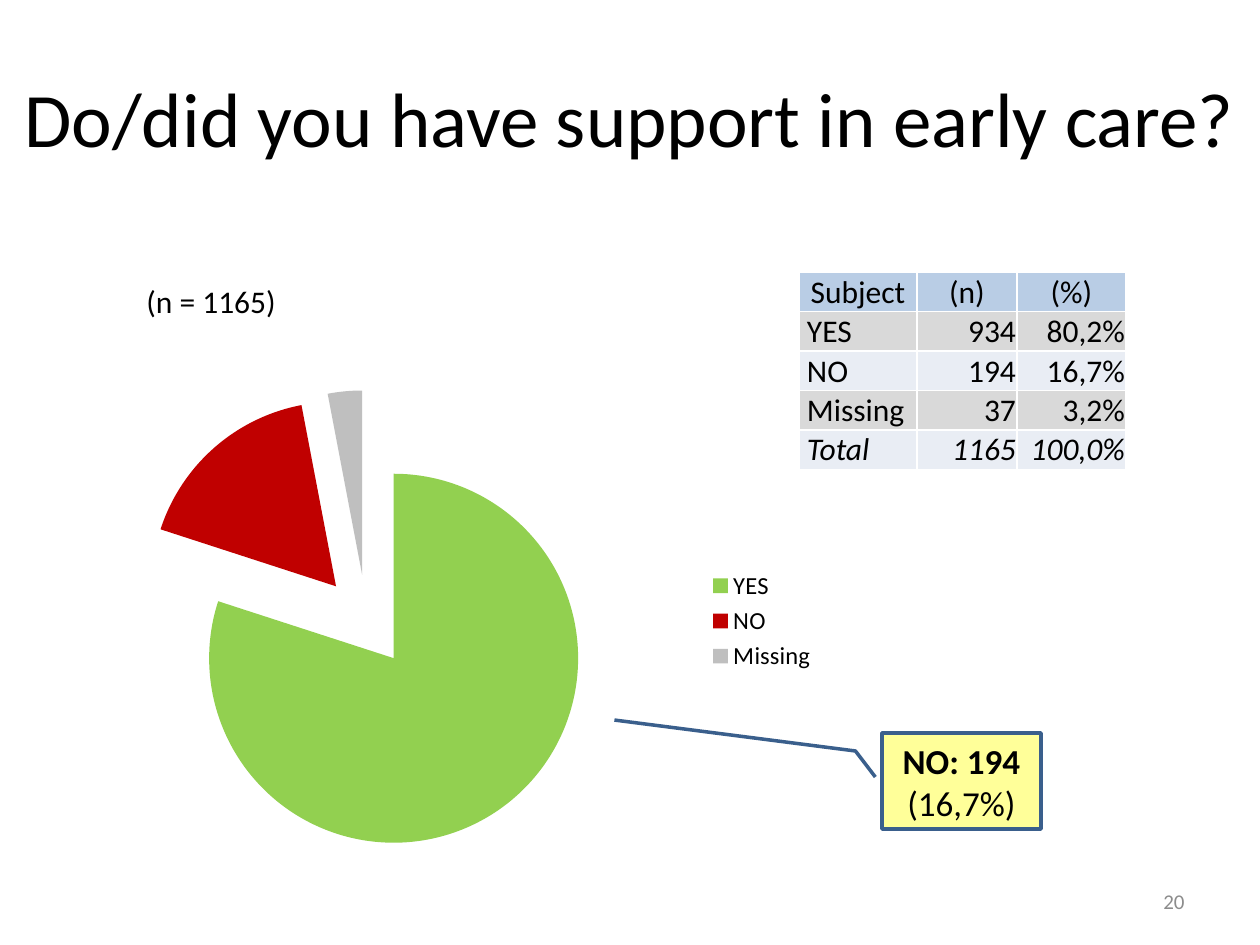
"""Build the slide on support in early care: pie chart, table and callout."""
from typing import NamedTuple

from lxml import etree
from pptx import Presentation
from pptx.chart.data import CategoryChartData
from pptx.dml.color import RGBColor
from pptx.enum.chart import XL_CHART_TYPE, XL_LEGEND_POSITION
from pptx.enum.shapes import MSO_SHAPE
from pptx.enum.text import MSO_ANCHOR, PP_ALIGN
from pptx.oxml.ns import qn
from pptx.util import Emu, Pt

PIE = XL_CHART_TYPE.PIE
LEGEND_RIGHT = XL_LEGEND_POSITION.RIGHT
CALLOUT = MSO_SHAPE.LINE_CALLOUT_2
MIDDLE, BOTTOM = MSO_ANCHOR.MIDDLE, MSO_ANCHOR.BOTTOM
LEFT, CENTER, RIGHT = PP_ALIGN.LEFT, PP_ALIGN.CENTER, PP_ALIGN.RIGHT

FONT = "Calibri"
EMU_PER_PX = 914400 / 126
BLACK = RGBColor(0x00, 0x00, 0x00)
GREEN = RGBColor(0x92, 0xD0, 0x50)
RED = RGBColor(0xC0, 0x00, 0x00)
SILVER = RGBColor(0xBF, 0xBF, 0xBF)
HEADER_BLUE = RGBColor(0xB9, 0xCD, 0xE5)
BAND_GREY = RGBColor(0xD9, 0xD9, 0xD9)
BAND_BLUE = RGBColor(0xE9, 0xED, 0xF4)
NOTE_YELLOW = RGBColor(0xFF, 0xFF, 0x99)
NOTE_BORDER = RGBColor(0x3A, 0x5F, 0x8C)
NUMBER_GREY = RGBColor(0x8C, 0x8C, 0x8C)

COLUMN_WIDTHS = (118, 100, 109)
ROW_HEIGHT = 39
EXPLOSION = 25
CALLOUT_POINTS = (0.459, -0.042, 0.188, -0.167, -0.135, -1.683)


class Box(NamedTuple):
    """Position and size in px."""
    left: int
    top: int
    width: int
    height: int


class Answer(NamedTuple):
    """One answer with its table texts, pie share and slice colour."""
    subject: str
    count: str
    percent: str
    share: int
    color: RGBColor


ANSWERS = (
    Answer("YES", "934", "80,2%", 80, GREEN),
    Answer("NO", "194", "16,7%", 17, RED),
    Answer("Missing", "37", "3,2%", 3, SILVER),
)
HEADER = ("Subject", "(n)", "(%)")
TOTAL = ("Total", "1165", "100,0%")


def px(length: int) -> Emu:
    """Convert px to EMU."""
    return Emu(round(length * EMU_PER_PX))


def place(box: Box) -> tuple[Emu, ...]:
    """Convert a box to EMU lengths."""
    return tuple(px(length) for length in box)


def add_run(paragraph, text: str, size: int, color: RGBColor = BLACK,
            bold: bool = False, italic: bool = False) -> None:
    """Append a formatted run to a paragraph."""
    run = paragraph.add_run()
    run.text = text
    font = run.font
    font.name, font.size, font.bold, font.italic = FONT, Pt(size), bold, italic
    font.color.rgb = color


def add_title(slide, box: Box, text: str) -> None:
    """Fill and move the title placeholder."""
    title = slide.shapes.title
    title.left, title.top, title.width, title.height = place(box)
    title.text_frame.vertical_anchor = MIDDLE
    paragraph = title.text_frame.paragraphs[0]
    paragraph.alignment = CENTER
    add_run(paragraph, text, 44)


def add_label(slide, box: Box, text: str, size: int, color: RGBColor,
              align: PP_ALIGN, wrap: bool) -> None:
    """Add a single-line text box."""
    frame = slide.shapes.add_textbox(*place(box)).text_frame
    frame.word_wrap = wrap
    frame.vertical_anchor = MIDDLE
    frame.paragraphs[0].alignment = align
    add_run(frame.paragraphs[0], text, size, color)


def add_answer_table(slide, left: int, top: int) -> None:
    """Add the table of counts and percentages."""
    rows = [HEADER, *(answer[:3] for answer in ANSWERS), TOTAL]
    box = Box(left, top, sum(COLUMN_WIDTHS), ROW_HEIGHT * len(rows))
    table = slide.shapes.add_table(len(rows), len(HEADER), *place(box)).table
    for column, width in zip(table.columns, COLUMN_WIDTHS):
        column.width = px(width)
    for row_index, texts in enumerate(rows):
        is_header = row_index == 0
        band = BAND_GREY if row_index % 2 else BAND_BLUE
        for column_index, text in enumerate(texts):
            is_subject = column_index == 0 and not is_header
            cell = table.cell(row_index, column_index)
            cell.fill.solid()
            cell.fill.fore_color.rgb = HEADER_BLUE if is_header else band
            cell.vertical_anchor = BOTTOM
            cell.margin_left = px(8 if is_subject else 1)
            cell.margin_right = cell.margin_top = px(1)
            cell.margin_bottom = 0
            paragraph = cell.text_frame.paragraphs[0]
            paragraph.alignment = CENTER if is_header else LEFT if is_subject else RIGHT
            add_run(paragraph, text, 18, italic=texts is TOTAL)


def add_callout(slide, box: Box) -> None:
    """Add the callout with the share of NO answers."""
    callout = slide.shapes.add_shape(CALLOUT, *place(box))
    callout.shadow.inherit = False
    for index, value in enumerate(CALLOUT_POINTS):
        callout.adjustments[index] = value
    callout.fill.solid()
    callout.fill.fore_color.rgb = NOTE_YELLOW
    callout.line.color.rgb = NOTE_BORDER
    callout.line.width = Pt(2)
    frame = callout.text_frame
    frame.word_wrap = True
    frame.vertical_anchor = MIDDLE
    paragraph = frame.paragraphs[0]
    paragraph.alignment = CENTER
    add_run(paragraph, "NO: 194", 20, bold=True)
    add_run(paragraph, " (16,7%)", 20)


def add_answer_pie(slide, box: Box) -> None:
    """Add the exploded pie chart of answers."""
    data = CategoryChartData()
    data.categories = [answer.subject for answer in ANSWERS]
    data.add_series("Series 1", [answer.share for answer in ANSWERS])
    chart = slide.shapes.add_chart(PIE, *place(box), data).chart
    chart.has_title = False
    chart.font.name, chart.font.size = FONT, Pt(10)
    chart.font.color.rgb = BLACK
    chart.has_legend = True
    legend = chart.legend
    legend.position = LEGEND_RIGHT
    legend.include_in_layout = False
    legend.font.name, legend.font.size = FONT, Pt(14)
    legend.font.color.rgb = BLACK
    plot = chart.plots[0]
    plot.vary_by_categories = True
    series = plot.series[0]
    explosion = etree.Element(qn("c:explosion"), val=str(EXPLOSION))
    series._element.find(qn("c:tx")).addnext(explosion)
    for index, answer in enumerate(ANSWERS):
        fill = series.points[index].format.fill
        fill.solid()
        fill.fore_color.rgb = answer.color


def main() -> None:
    """Build and save the slide."""
    presentation = Presentation()
    presentation.slide_width, presentation.slide_height = px(1260), px(945)
    slide = presentation.slides.add_slide(presentation.slide_layouts[5])
    add_title(slide, Box(0, 38, 1260, 157), "Do/did you have support in early care?")
    add_answer_table(slide, 799, 272)
    add_label(slide, Box(134, 276, 156, 50), "(n = 1165)", 18, BLACK, LEFT, False)
    add_callout(slide, Box(882, 733, 159, 96))
    add_answer_pie(slide, Box(28, 373, 801, 496))
    add_label(slide, Box(903, 876, 294, 50), "20", 12, NUMBER_GREY, RIGHT, True)
    presentation.save("out.pptx")


if __name__ == "__main__":
    main()
